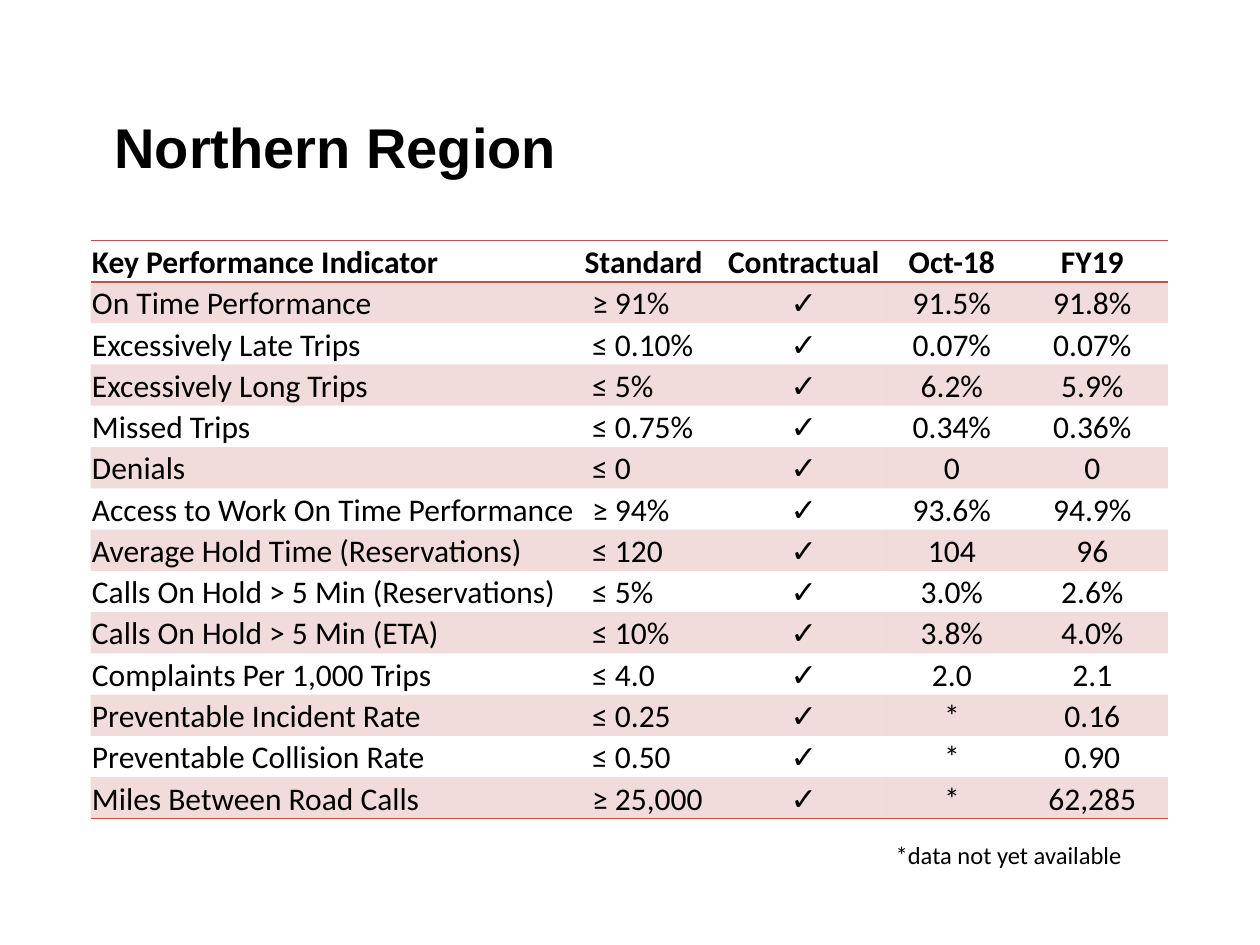
"""Build the Northern Region key performance indicator slide."""
from dataclasses import dataclass

from lxml import etree
from pptx import Presentation
from pptx.dml.color import RGBColor
from pptx.enum.text import MSO_ANCHOR, PP_ALIGN
from pptx.oxml.ns import qn
from pptx.util import Inches, Pt

LEFT, CENTER, RIGHT = PP_ALIGN.LEFT, PP_ALIGN.CENTER, PP_ALIGN.RIGHT
TOP, MIDDLE, BOTTOM = MSO_ANCHOR.TOP, MSO_ANCHOR.MIDDLE, MSO_ANCHOR.BOTTOM

TITLE = "Northern Region"
NOTE = "*data not yet available"
HEADER = ("Key Performance Indicator", "Standard", "Contractual", "Oct-18", "FY19")
KPIS = [
    ("On Time Performance", "≥ 91%", "✓", "91.5%", "91.8%"),
    ("Excessively Late Trips", "≤ 0.10%", "✓", "0.07%", "0.07%"),
    ("Excessively Long Trips", "≤ 5%", "✓", "6.2%", "5.9%"),
    ("Missed Trips", "≤ 0.75%", "✓", "0.34%", "0.36%"),
    ("Denials", "≤ 0", "✓", "0", "0"),
    ("Access to Work On Time Performance", "≥ 94%", "✓", "93.6%", "94.9%"),
    ("Average Hold Time (Reservations)", "≤ 120", "✓", "104", "96"),
    ("Calls On Hold > 5 Min (Reservations)", "≤ 5%", "✓", "3.0%", "2.6%"),
    ("Calls On Hold > 5 Min (ETA)", "≤ 10%", "✓", "3.8%", "4.0%"),
    ("Complaints Per 1,000 Trips", "≤ 4.0", "✓", "2.0", "2.1"),
    ("Preventable Incident Rate", "≤ 0.25", "✓", "*", "0.16"),
    ("Preventable Collision Rate", "≤ 0.50", "✓", "*", "0.90"),
    ("Miles Between Road Calls", "≥ 25,000", "✓", "*", "62,285"),
]

SLIDE_W, SLIDE_H = 10, 7.5
TITLE_BOX = (0.81, 0.84, 8.39, 0.64)
NOTE_BOX = (6.44, 6.62, 2.56, 0.34)
TABLE_X, TABLE_Y, TABLE_H = 0.72, 1.91, 4.59
COL_W = (3.91, 1.09, 1.32, 1.03, 1.2)
COL_ALIGN = (LEFT, LEFT, CENTER, CENTER, CENTER)
CELL_PAD, STANDARD_PAD = 0.01, 0.07
NO_STYLE = "{2D5ABB26-0587-4C30-8999-92F81FD0307C}"


@dataclass(frozen=True)
class Theme:
    ink: str = "000000"
    accent: str = "C0504D"
    band_alpha: int = 20
    rule: float = 1
    title_font: str = "Arial"
    body_font: str = "Calibri"
    title: int = 32
    body: int = 18
    note: int = 14


THEME = Theme()


def write(tf, text, size=THEME.body, font=THEME.body_font, bold=False, align=LEFT):
    p = tf.paragraphs[0]
    p.alignment = align
    r = p.add_run()
    r.text = text
    r.font.size, r.font.name, r.font.bold = Pt(size), font, bold
    r.font.color.rgb = RGBColor.from_string(THEME.ink)


def add_text(slide, box, text, anchor=TOP, **fmt):
    tf = slide.shapes.add_textbox(*map(Inches, box)).text_frame
    tf.word_wrap = True
    tf.vertical_anchor = anchor
    write(tf, text, **fmt)


def add_rule(cell, edge):
    tc_pr = cell._tc.get_or_add_tcPr()
    ln = etree.SubElement(tc_pr, qn(f"a:ln{edge}"), w=str(Pt(THEME.rule)))
    fill = etree.SubElement(ln, qn("a:solidFill"))
    etree.SubElement(fill, qn("a:srgbClr"), val=THEME.accent)


def tint(cell):
    cell.fill.solid()
    cell.fill.fore_color.rgb = RGBColor.from_string(THEME.accent)
    color = cell._tc.tcPr.find(f".//{qn('a:solidFill')}[last()]/{qn('a:srgbClr')}")
    color = cell._tc.tcPr.find(qn("a:solidFill")).find(qn("a:srgbClr"))
    etree.SubElement(color, qn("a:alpha"), val=str(THEME.band_alpha * 1000))


def add_kpi_table(slide):
    rows = [HEADER, *KPIS]
    last = len(rows) - 1
    box = (TABLE_X, TABLE_Y, sum(COL_W), TABLE_H)
    table = slide.shapes.add_table(len(rows), len(COL_W), *map(Inches, box)).table
    table.horz_banding = False
    table._tbl.tblPr.find(qn("a:tableStyleId")).text = NO_STYLE
    for col, width in zip(table.columns, COL_W):
        col.width = Inches(width)
    for i, values in enumerate(rows):
        table.rows[i].height = Inches(TABLE_H / len(rows))
        edges = {0: "TB", last: "B"}.get(i, "")
        for j, text in enumerate(values):
            cell = table.cell(i, j)
            cell.vertical_anchor = BOTTOM
            pad = STANDARD_PAD if i and j == 1 else CELL_PAD
            cell.margin_left = Inches(pad)
            cell.margin_right = cell.margin_top = Inches(CELL_PAD)
            cell.margin_bottom = 0
            for edge in edges:
                add_rule(cell, edge)
            if i % 2:
                tint(cell)
            else:
                cell.fill.background()
            write(cell.text_frame, text, bold=i == 0, align=COL_ALIGN[j])


def main():
    prs = Presentation()
    prs.slide_width, prs.slide_height = Inches(SLIDE_W), Inches(SLIDE_H)
    slide = prs.slides.add_slide(prs.slide_layouts[6])
    add_text(slide, TITLE_BOX, TITLE, anchor=MIDDLE, size=THEME.title,
             font=THEME.title_font, bold=True)
    add_kpi_table(slide)
    add_text(slide, NOTE_BOX, NOTE, size=THEME.note, align=RIGHT)
    prs.save("out.pptx")


if __name__ == "__main__":
    main()
